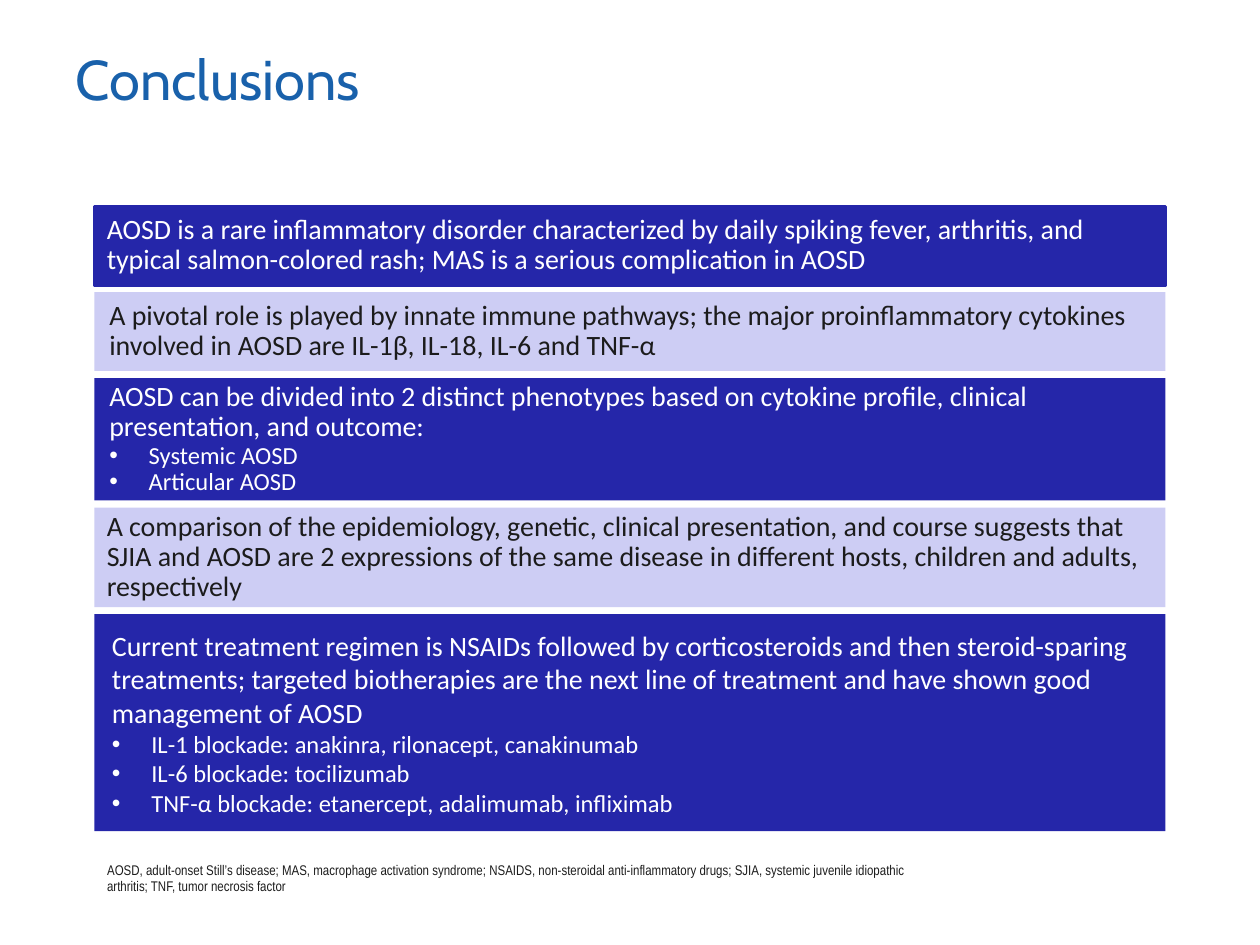
"""Build the Conclusions slide with its stack of summary bars."""
from dataclasses import dataclass

from lxml import etree
from pptx import Presentation
from pptx.dml.color import RGBColor
from pptx.enum.shapes import MSO_SHAPE
from pptx.enum.text import MSO_ANCHOR, MSO_AUTO_SIZE, PP_ALIGN
from pptx.oxml.ns import qn
from pptx.util import Pt

RECT = MSO_SHAPE.RECTANGLE
TOP, MIDDLE, BOTTOM = MSO_ANCHOR.TOP, MSO_ANCHOR.MIDDLE, MSO_ANCHOR.BOTTOM
LEFT = PP_ALIGN.LEFT
FIXED = MSO_AUTO_SIZE.NONE
COLORS = {"title": "1961AB", "dark": "2526A9", "light": "CDCDF4",
          "white": "FFFFFF", "ink": "1C1C1C"}
BAR_LEFT, BAR_TOP, BAR_WIDTH, GAP = 54, 118, 612, 4
INSET = 5
INDENT = 22.5


@dataclass(frozen=True)
class Bar:
    """One bar of the stack, with its text and the margins of the text box."""
    height: float
    pad_x: float
    pad_y: float
    fill: str
    ink: str
    text: str
    items: tuple[str, ...] = ()
    spacing: float = 0.9
    border: float = 0
    solid: bool = False


BARS = (
    Bar(45, 2, 2, "dark", "white",
        "AOSD is a rare inflammatory disorder characterized by daily spiking "
        "fever, arthritis, and typical salmon-colored rash; MAS is a serious "
        "complication in AOSD", border=2, solid=True),
    Bar(45, 3.5, 0, "light", "ink",
        "A pivotal role is played by innate immune pathways; the major "
        "proinflammatory cytokines involved in AOSD are IL-1β, IL-18, IL-6 "
        "and TNF-α"),
    Bar(70, 3.5, 3, "dark", "white",
        "AOSD can be divided into 2 distinct phenotypes based on cytokine "
        "profile, clinical presentation, and outcome:",
        ("Systemic AOSD", "Articular AOSD")),
    Bar(57, 2, 5, "light", "ink",
        "A comparison of the epidemiology, genetic, clinical presentation, "
        "and course suggests that SJIA and AOSD are 2 expressions of the same "
        "disease in different hosts, children and adults, respectively"),
    Bar(124, 5, 9, "dark", "white",
        "Current treatment regimen is NSAIDs followed by corticosteroids and "
        "then steroid-sparing treatments; targeted biotherapies are the next "
        "line of treatment and have shown good management of AOSD",
        ("IL-1 blockade: anakinra, rilonacept, canakinumab",
         "IL-6 blockade: tocilizumab",
         "TNF-α blockade: etanercept, adalimumab, infliximab"),
        spacing=1, solid=True),
)
NOTE = ("AOSD, adult-onset Still’s disease; MAS, macrophage activation "
        "syndrome; NSAIDS, non-steroidal anti-inflammatory drugs; SJIA, "
        "systemic juvenile idiopathic arthritis; TNF, tumor necrosis factor")


def tint(name: str) -> RGBColor:
    """Return a named colour."""
    return RGBColor.from_string(COLORS[name])


def place(shape, left: float, top: float, width: float, height: float) -> None:
    """Move and size a shape in points."""
    shape.left, shape.top = Pt(left), Pt(top)
    shape.width, shape.height = Pt(width), Pt(height)


def frame(shape, anchor: MSO_ANCHOR):
    """Set wrapping and anchor, and return the text frame."""
    text = shape.text_frame
    text.word_wrap = True
    text.auto_size = FIXED
    text.vertical_anchor = anchor
    return text


def write(para, words: str, font: str, size: float, color: str) -> None:
    """Add one formatted run to a left-aligned paragraph."""
    para.alignment = LEFT
    para.space_before = Pt(0)
    run = para.add_run()
    run.text = words
    run.font.name, run.font.size = font, Pt(size)
    run.font.color.rgb = tint(color)


def bullet(para, color: str) -> None:
    """Give a paragraph a hanging round bullet."""
    props = para._p.get_or_add_pPr()
    props.set("marL", str(Pt(INDENT)))
    props.set("indent", str(-Pt(INDENT)))
    shade = etree.SubElement(props, qn("a:buClr"))
    etree.SubElement(shade, qn("a:srgbClr")).set("val", COLORS[color])
    etree.SubElement(props, qn("a:buFont")).set("typeface", "Arial")
    etree.SubElement(props, qn("a:buChar")).set("char", "•")


def plain(para) -> None:
    """Remove the bullet and indent that the layout gives."""
    props = para._p.get_or_add_pPr()
    props.set("marL", "0")
    props.set("indent", "0")
    etree.SubElement(props, qn("a:buNone"))


def draw_bar(slide, bar: Bar, top: float) -> None:
    """Draw a bar and its text as one group."""
    group = slide.shapes.add_group_shape()
    back = group.shapes.add_shape(
        RECT, Pt(BAR_LEFT), Pt(top), Pt(BAR_WIDTH), Pt(bar.height))
    back.shadow.inherit = False
    back.fill.solid()
    back.fill.fore_color.rgb = tint(bar.fill)
    if bar.border:
        back.line.color.rgb = tint(bar.fill)
        back.line.width = Pt(bar.border)
    else:
        back.line.fill.background()

    label = group.shapes.add_textbox(
        Pt(BAR_LEFT + bar.pad_x), Pt(top + bar.pad_y),
        Pt(BAR_WIDTH - 2 * bar.pad_x), Pt(bar.height - 2 * bar.pad_y))
    if bar.solid:
        label.fill.solid()
        label.fill.fore_color.rgb = tint(bar.fill)
    text = frame(label, MIDDLE)
    text.margin_left = text.margin_right = Pt(INSET)
    text.margin_top = text.margin_bottom = Pt(INSET)
    para = text.paragraphs[0]
    para.line_spacing = bar.spacing
    write(para, bar.text, "Calibri", 16, bar.ink)
    for item in bar.items:
        para = text.add_paragraph()
        bullet(para, bar.ink)
        para.line_spacing = bar.spacing
        write(para, item, "Calibri", 14, bar.ink)


def main() -> None:
    """Build and save the slide."""
    deck = Presentation()
    deck.slide_width, deck.slide_height = Pt(720), Pt(540)
    slide = deck.slides.add_slide(deck.slide_layouts[1])

    title = slide.shapes.title
    place(title, 36, 21.6, 648, 90)
    write(frame(title, TOP).paragraphs[0], "Conclusions", "Cabin", 32, "title")

    note = slide.placeholders[1]
    place(note, 54, 488.8, 474, 26)
    para = frame(note, BOTTOM).paragraphs[0]
    plain(para)
    write(para, NOTE, "Arial Narrow", 8, "ink")

    top = BAR_TOP
    for bar in BARS:
        draw_bar(slide, bar, top)
        top += bar.height + GAP
    deck.save("out.pptx")


if __name__ == "__main__":
    main()
